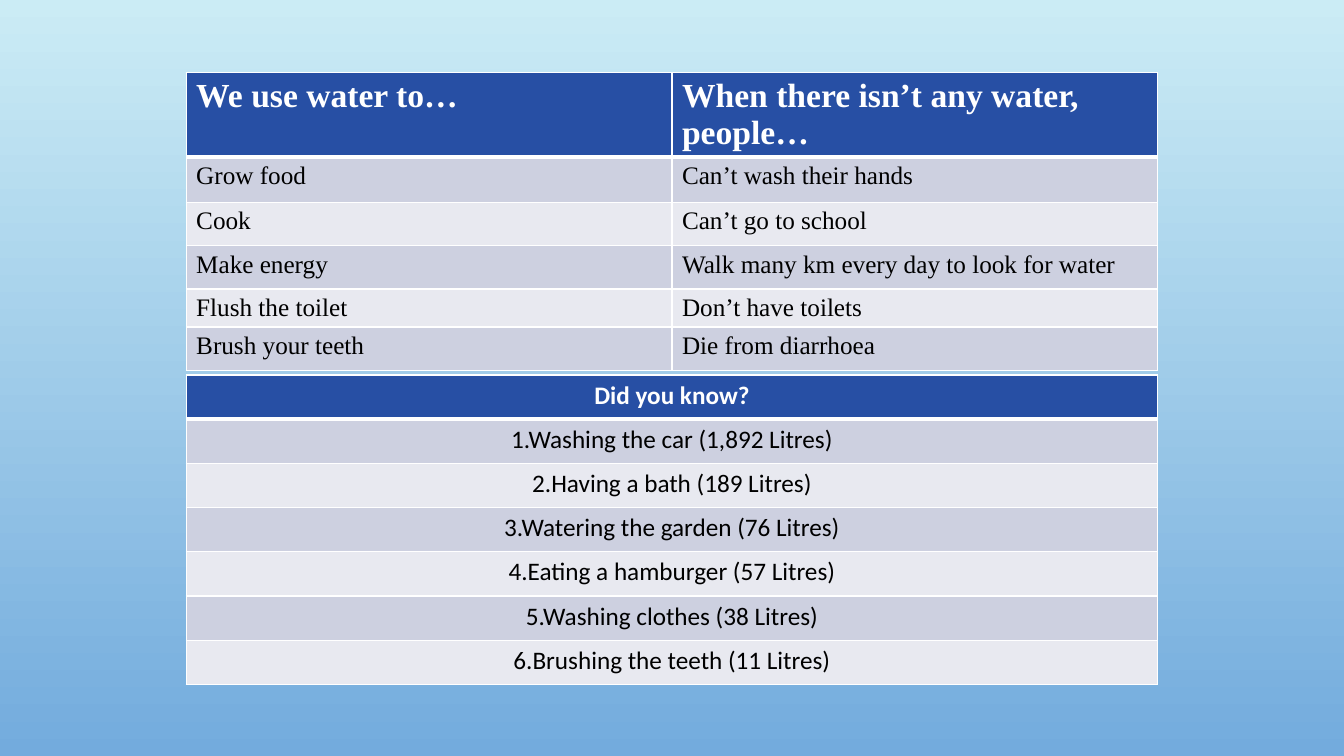
from dataclasses import dataclass

from lxml.etree import SubElement
from pptx import Presentation
from pptx.dml.color import RGBColor
from pptx.enum.text import PP_ALIGN
from pptx.oxml.ns import qn
from pptx.util import Inches, Pt


@dataclass(frozen=True)
class Theme:
    sky: str = "CBECF5"
    sea: str = "73ABDD"
    header: str = "274FA4"
    bands: tuple = ("CDD0E0", "E8E9F0")
    header_ink: str = "FFFFFF"
    body_ink: str = "000000"
    rule: str = "FFFFFF"
    thin: int = 1
    thick: int = 3
    heading_size: int = 24
    body_size: int = 18
    serif: str = "Times New Roman"
    sans: str = "Calibri"


class SlideBuilder:
    def __init__(self, deck, theme):
        self.deck = deck
        self.theme = theme
        self.slide = deck.slides.add_slide(deck.slide_layouts[6])

    def across(self, percent):
        return round(self.deck.slide_width * percent / 100)

    def down(self, percent):
        return round(self.deck.slide_height * percent / 100)

    def background(self):
        fill = self.slide.background.fill
        fill.gradient()
        fill.gradient_angle = 270
        for stop, colour in zip(fill.gradient_stops, (self.theme.sky, self.theme.sea)):
            stop.color.rgb = RGBColor.from_string(colour)

    def borders(self, cell, top, bottom):
        properties = cell._tc.get_or_add_tcPr()
        widths = {"lnL": self.theme.thin, "lnR": self.theme.thin, "lnT": top, "lnB": bottom}
        for side, width in widths.items():
            line = SubElement(properties, qn(f"a:{side}"), w=str(Pt(width)))
            SubElement(SubElement(line, qn("a:solidFill")), qn("a:srgbClr"), val=self.theme.rule)

    def cell(self, cell, wording, row, face, heading_size, align):
        theme = self.theme
        is_header = row == 0
        self.borders(
            cell,
            theme.thick if row == 1 else theme.thin,
            theme.thick if is_header else theme.thin,
        )
        cell.fill.solid()
        shade = theme.header if is_header else theme.bands[(row - 1) % 2]
        cell.fill.fore_color.rgb = RGBColor.from_string(shade)
        cell.text = wording
        paragraph = cell.text_frame.paragraphs[0]
        paragraph.alignment = align
        font = paragraph.runs[0].font
        font_format = {
            "name": face,
            "size": Pt(heading_size if is_header else theme.body_size),
            "bold": is_header,
        }
        for attribute, value in font_format.items():
            setattr(font, attribute, value)
        ink = theme.header_ink if is_header else theme.body_ink
        font.color.rgb = RGBColor.from_string(ink)

    def table(self, entries, top, width, heights, face, heading_size, align):
        columns = len(entries[0])
        grid = self.slide.shapes.add_table(
            len(entries), columns, self.across((100 - width) / 2), self.down(top),
            self.across(width), self.down(sum(heights)),
        ).table
        for column in grid.columns:
            column.width = self.across(width / columns)
        for row, (height, wordings) in enumerate(zip(heights, entries)):
            grid.rows[row].height = self.down(height)
            for column, wording in enumerate(wordings):
                self.cell(grid.cell(row, column), wording, row, face, heading_size, align)


WATER_USES = [
    ("We use water to…", "When there isn’t any water, people…"),
    ("Grow food", "Can’t wash their hands"),
    ("Cook", "Can’t go to school"),
    ("Make energy", "Walk many km every day to look for water"),
    ("Flush the toilet", "Don’t have toilets"),
    ("Brush your teeth", "Die from diarrhoea"),
]
WATER_AMOUNTS = [
    ("Did you know?",),
    ("1.Washing the car (1,892 Litres)",),
    ("2.Having a bath (189 Litres)",),
    ("3.Watering the garden (76 Litres)",),
    ("4.Eating a hamburger (57 Litres)",),
    ("5.Washing clothes (38 Litres)",),
    ("6.Brushing the teeth (11 Litres)",),
]
TABLE_WIDTH = 72.3


def main():
    deck = Presentation()
    deck.slide_width, deck.slide_height = Inches(13.33), Inches(7.5)
    theme = Theme()
    builder = SlideBuilder(deck, theme)
    builder.background()
    builder.table(
        WATER_USES, 9.6, TABLE_WIDTH, [10.53, 6, 5.73, 5.73, 4.27, 5.73],
        theme.serif, theme.heading_size, PP_ALIGN.LEFT,
    )
    builder.table(
        WATER_AMOUNTS, 49.6, TABLE_WIDTH, [5.85] * len(WATER_AMOUNTS),
        theme.sans, theme.body_size, PP_ALIGN.CENTER,
    )
    deck.save("out.pptx")


if __name__ == "__main__":
    main()
